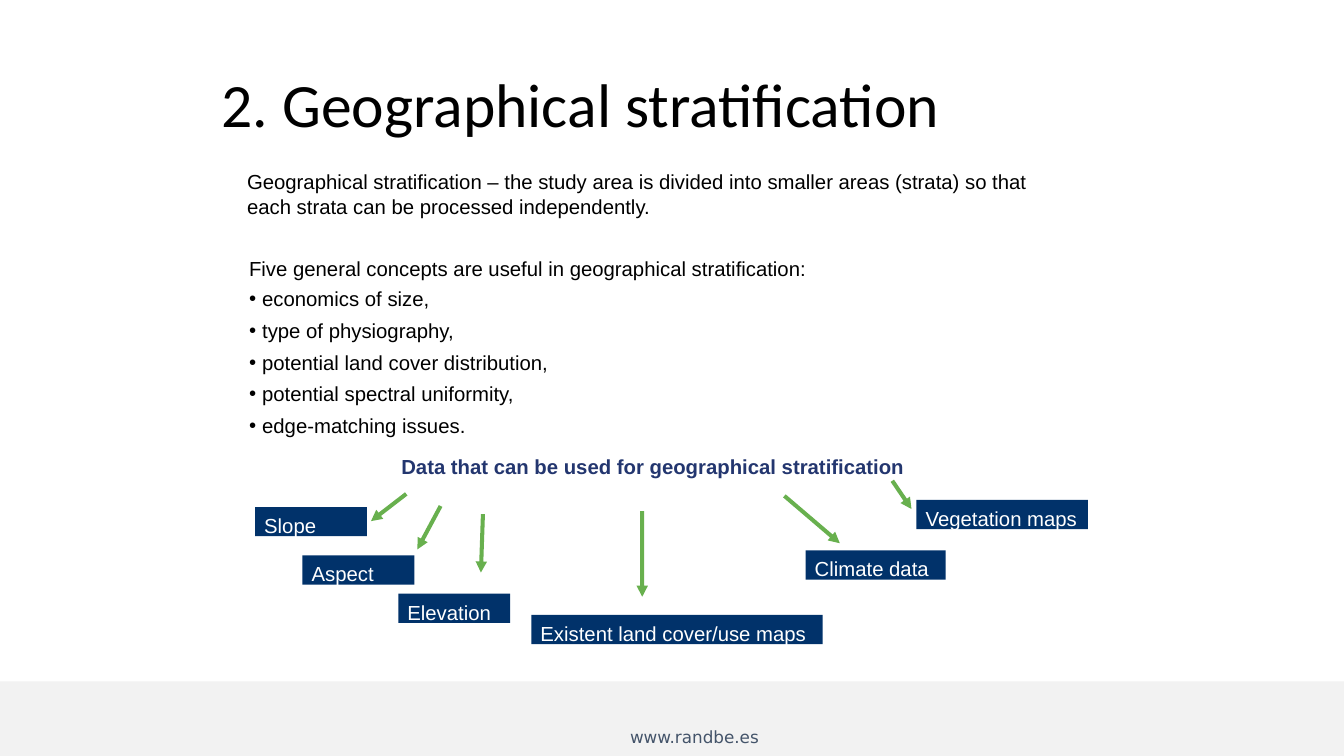
from dataclasses import dataclass
from math import hypot

from lxml.etree import SubElement
from pptx import Presentation
from pptx.dml.color import RGBColor
from pptx.enum.shapes import MSO_SHAPE
from pptx.enum.text import MSO_ANCHOR, PP_ALIGN
from pptx.oxml.ns import qn
from pptx.util import Inches, Pt


@dataclass(frozen=True)
class Theme:
    ink: str = "000000"
    heading: str = "23366F"
    label: str = "01326A"
    label_text: str = "FFFFFF"
    arrow: str = "68B04E"
    band: str = "F2F2F2"
    footer: str = "44546A"
    title_font: str = "Calibri"
    body_font: str = "Arial"
    footer_font: str = "DejaVu Sans"
    title_size: float = 44
    body_size: float = 14.5
    footer_size: float = 12


THEME = Theme()

# text, left margin, space before, bulleted, heading
BODY = [
    ("Geographical stratification – the study area is divided into smaller areas "
     "(strata) so that each strata can be processed independently.", 0.01, 0, False, False),
    ("Five general concepts are useful in geographical stratification:", 0.03, 27, False, False),
    ("economics of size,", 0.16, 4.4, True, False),
    ("type of physiography,", 0.16, 5.2, True, False),
    ("potential land cover distribution,", 0.16, 5.3, True, False),
    ("potential spectral uniformity,", 0.16, 5.3, True, False),
    ("edge-matching issues.", 0.16, 5.2, True, False),
    ("Data that can be used for geographical stratification", 1.54, 12, False, True),
]

# text, left, top, width, arrow start, arrow tip
DATA_SOURCES = [
    ("Slope", 2.53, 5.03, 1.11, (4.03, 4.9), (3.68, 5.17)),
    ("Aspect", 3, 5.51, 1.11, (4.37, 5.02), (4.14, 5.45)),
    ("Elevation", 3.95, 5.89, 1.11, (4.79, 5.1), (4.77, 5.68)),
    ("Existent land cover/use maps", 5.27, 6.1, 2.89, (6.37, 5.07), (6.37, 5.92)),
    ("Climate data", 7.99, 5.46, 1.39, (7.78, 4.92), (8.33, 5.39)),
    ("Vegetation maps", 9.09, 4.96, 1.7, (8.85, 4.77), (9.04, 5.05)),
]


def place(shape, left, top, width, height):
    shape.left, shape.top = Inches(left), Inches(top)
    shape.width, shape.height = Inches(width), Inches(height)


def set_insets(frame, left=0, top=0):
    frame.margin_left, frame.margin_top = Inches(left), Inches(top)
    frame.margin_right = frame.margin_bottom = 0


def set_bullet(para, margin, bulleted):
    properties = para._p.get_or_add_pPr()
    properties.set("marL", str(Inches(margin)))
    properties.set("indent", str(Inches(-0.13 if bulleted else 0)))
    if bulleted:
        SubElement(properties, qn("a:buChar")).set("char", "•")
    else:
        SubElement(properties, qn("a:buNone"))


def style(para, font, size, color, bold=False):
    para.alignment = PP_ALIGN.LEFT
    para.font.name = font
    para.font.size = Pt(size)
    para.font.bold = bold
    para.font.color.rgb = RGBColor.from_string(color)


def paint(shape, color):
    shape.shadow.inherit = False
    shape.fill.solid()
    shape.fill.fore_color.rgb = RGBColor.from_string(color)
    shape.line.fill.background()


def add_rectangle(page, left, top, width, height, color):
    box = page.shapes.add_shape(MSO_SHAPE.RECTANGLE, Inches(left), Inches(top),
                                Inches(width), Inches(height))
    paint(box, color)
    return box


def add_footer(page):
    add_rectangle(page, 0, 6.76, 13.33, 0.74, THEME.band)
    box = page.shapes.add_textbox(Inches(6.15), Inches(7.16), Inches(1.72), Inches(0.3))
    box.text_frame.word_wrap = True
    para = box.text_frame.paragraphs[0]
    para.text = "www.randbe.es"
    style(para, THEME.footer_font, THEME.footer_size, THEME.footer)


def fill_title(title):
    place(title, 2.19, 0.65, 10.44, 0.74)
    frame = title.text_frame
    frame.vertical_anchor = MSO_ANCHOR.MIDDLE
    set_insets(frame, left=0.01)
    para = frame.paragraphs[0]
    para.text = "2. Geographical stratification"
    style(para, THEME.title_font, THEME.title_size, THEME.ink)


def fill_body(body):
    place(body, 2.44, 1.68, 7.77, 3.07)
    frame = body.text_frame
    set_insets(frame)
    for index, (text, margin, space, bulleted, heading) in enumerate(BODY):
        para = frame.add_paragraph() if index else frame.paragraphs[0]
        para.text = text
        set_bullet(para, margin, bulleted)
        para.space_before = Pt(space)
        style(para, THEME.body_font, THEME.body_size,
              THEME.heading if heading else THEME.ink, heading)


def add_label(page, text, left, top, width):
    box = add_rectangle(page, left, top, width, 0.29, THEME.label)
    frame = box.text_frame
    frame.word_wrap = True
    frame.vertical_anchor = MSO_ANCHOR.TOP
    set_insets(frame, left=0.09, top=0.06)
    para = frame.paragraphs[0]
    para.text = text
    style(para, THEME.body_font, THEME.body_size, THEME.label_text)


def add_block_arrow(page, start, tip):
    """Draw a filled arrow outline around the line from start to tip."""
    length = hypot(tip[0] - start[0], tip[1] - start[1])
    along = ((tip[0] - start[0]) / length, (tip[1] - start[1]) / length)
    neck, shaft, head = length - 0.11, 0.02, 0.057
    outline = [(0, shaft), (neck, shaft), (neck, head), (length, 0),
               (neck, -head), (neck, -shaft), (0, -shaft)]
    points = [(Inches(start[0] + run * along[0] - side * along[1]),
               Inches(start[1] + run * along[1] + side * along[0]))
              for run, side in outline]
    builder = page.shapes.build_freeform(*points[0])
    builder.add_line_segments(points[1:], close=True)
    paint(builder.convert_to_shape(), THEME.arrow)


def main():
    deck = Presentation()
    deck.slide_width, deck.slide_height = Inches(13.33), Inches(7.5)
    page = deck.slides.add_slide(deck.slide_layouts[1])
    add_footer(page)
    fill_title(page.shapes.title)
    fill_body(page.placeholders[1])
    for text, left, top, width, start, tip in DATA_SOURCES:
        add_label(page, text, left, top, width)
        add_block_arrow(page, start, tip)
    deck.save("out.pptx")


if __name__ == "__main__":
    main()
